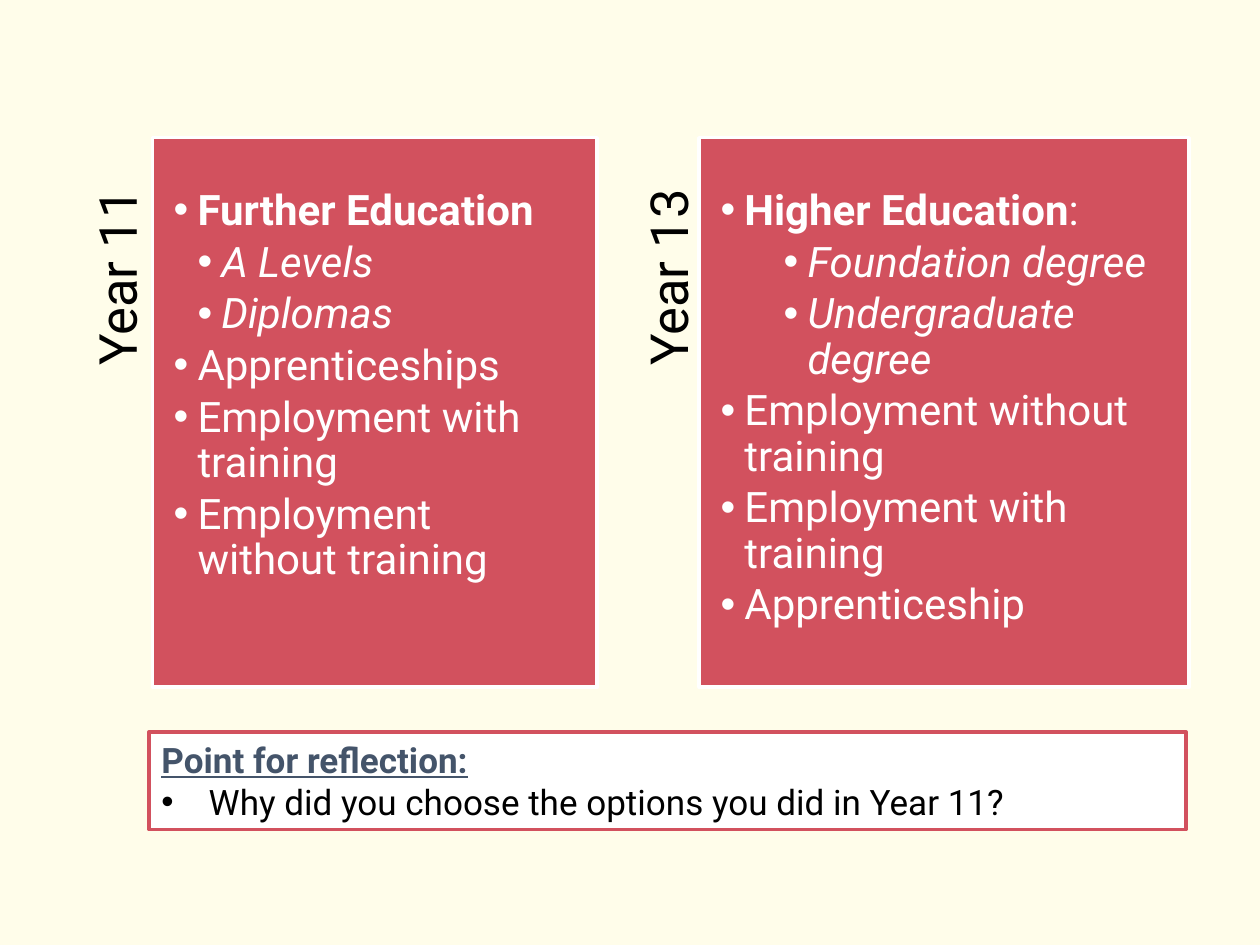
from dataclasses import dataclass
from typing import NamedTuple

from lxml.etree import SubElement
from pptx import Presentation
from pptx.dml.color import RGBColor
from pptx.enum.shapes import MSO_SHAPE as Shape
from pptx.enum.text import MSO_ANCHOR as Anchor, PP_ALIGN as Align
from pptx.oxml.ns import qn
from pptx.util import Pt

COLOURS = {"cream": "FFFDEA", "red": "D2515E", "white": "FFFFFF", "black": "000000", "slate": "44546A"}
FONT = "Roboto"
PANEL_TOP, PANEL_HEIGHT = 78.7, 314
LABEL_LENGTH, LABEL_HEIGHT = 326, 33
BULLET_HANG = 13.6


class Option(NamedTuple):
    text: str
    level: int = 0
    bold: bool = False
    suffix: str = ""


@dataclass
class Stage:
    year: str
    label_centre: float
    left: float
    width: float
    right_inset: float
    sub_indent: float
    options: list[Option]


STAGES = [
    Stage("Year 11", 68.8, 87.1, 254.2, 24.5, 27.2, [
        Option("Further Education", bold=True),
        Option("A Levels", 1),
        Option("Diplomas", 1),
        Option("Apprenticeships"),
        Option("Employment with training"),
        Option("Employment without training"),
    ]),
    Stage("Year 13", 383.8, 399.6, 280, 12.2, 49.7, [
        Option("Higher Education", bold=True, suffix=":"),
        Option("Foundation degree", 1),
        Option("Undergraduate degree", 1),
        Option("Employment without training"),
        Option("Employment with training"),
        Option("Apprenticeship"),
    ]),
]


def colour(name: str) -> RGBColor:
    """Look up a palette colour."""
    return RGBColor.from_string(COLOURS[name])


def add_run(paragraph, text: str, size: float, ink: str, bold=False, italic=False, underline=False) -> None:
    """Append one formatted run."""
    run = paragraph.add_run()
    run.text = text
    font = run.font
    font.name, font.size = FONT, Pt(size)
    font.bold, font.italic, font.underline = bold, italic, underline
    font.color.rgb = colour(ink)


def add_bullet(paragraph, indent: float, hang: float) -> None:
    """Give a paragraph a round bullet with a hanging indent."""
    properties = paragraph._p.get_or_add_pPr()
    properties.set("marL", str(Pt(indent)))
    properties.set("indent", str(Pt(-hang)))
    SubElement(properties, qn("a:buFont")).set("typeface", "Arial")
    SubElement(properties, qn("a:buChar")).set("char", "•")


def set_insets(frame, left: float, top: float, right: float, bottom: float) -> None:
    """Set the four text insets."""
    frame.margin_left, frame.margin_top = Pt(left), Pt(top)
    frame.margin_right, frame.margin_bottom = Pt(right), Pt(bottom)


def add_box(slide, left: float, top: float, width: float, height: float, fill: str, line: str):
    """Draw an outlined rectangle and return its text frame."""
    box = slide.shapes.add_shape(Shape.RECTANGLE, Pt(left), Pt(top), Pt(width), Pt(height))
    box.shadow.inherit = False
    box.fill.solid()
    box.fill.fore_color.rgb = colour(fill)
    box.line.color.rgb = colour(line)
    box.line.width = Pt(2)
    frame = box.text_frame
    frame.word_wrap = True
    frame.vertical_anchor = Anchor.TOP
    return frame


def add_year_label(slide, stage: Stage) -> None:
    """Write the year upwards along the left of its panel."""
    label = slide.shapes.add_textbox(
        Pt(stage.label_centre - LABEL_LENGTH / 2),
        Pt(PANEL_TOP + (LABEL_LENGTH - LABEL_HEIGHT) / 2),
        Pt(LABEL_LENGTH), Pt(LABEL_HEIGHT))
    label.rotation = 270
    frame = label.text_frame
    frame.word_wrap = True
    set_insets(frame, 0, 0, 29.5, 0)
    year = frame.paragraphs[0]
    year.alignment = Align.RIGHT
    year.line_spacing = 0.9
    add_run(year, stage.year, 30, "black")


def add_panel(slide, stage: Stage) -> None:
    """Draw a panel listing the options of one stage."""
    frame = add_box(slide, stage.left, PANEL_TOP, stage.width, PANEL_HEIGHT, "red", "white")
    set_insets(frame, 12.2, 29.5, stage.right_inset, 12.2)
    for index, option in enumerate(stage.options):
        item = frame.add_paragraph() if index else frame.paragraphs[0]
        item.alignment = Align.LEFT
        item.level = option.level + 1
        item.line_spacing = 0.9
        item.space_after = Pt(3.6)
        add_bullet(item, stage.sub_indent if option.level else BULLET_HANG, BULLET_HANG)
        add_run(item, option.text, 24, "white", bold=option.bold, italic=option.level > 0)
        if option.suffix:
            add_run(item, option.suffix, 24, "white")


def add_reflection(slide) -> None:
    """Draw the reflection prompt under the panels."""
    frame = add_box(slide, 85.2, 418.3, 592.6, 55.7, "white", "red")
    heading = frame.paragraphs[0]
    heading.alignment = Align.LEFT
    add_run(heading, "Point for reflection:", 20, "slate", bold=True, underline=True)
    question = frame.add_paragraph()
    question.alignment = Align.LEFT
    add_bullet(question, 27, 27)
    add_run(question, "Why did you choose the options you did in Year 11?", 20, "black")


def main() -> None:
    """Build and save the slide."""
    deck = Presentation()
    deck.slide_width, deck.slide_height = Pt(720), Pt(540)
    slide = deck.slides.add_slide(deck.slide_layouts[6])
    slide.background.fill.solid()
    slide.background.fill.fore_color.rgb = colour("cream")
    for stage in STAGES:
        add_year_label(slide, stage)
        add_panel(slide, stage)
    add_reflection(slide)
    deck.save("out.pptx")


if __name__ == "__main__":
    main()
